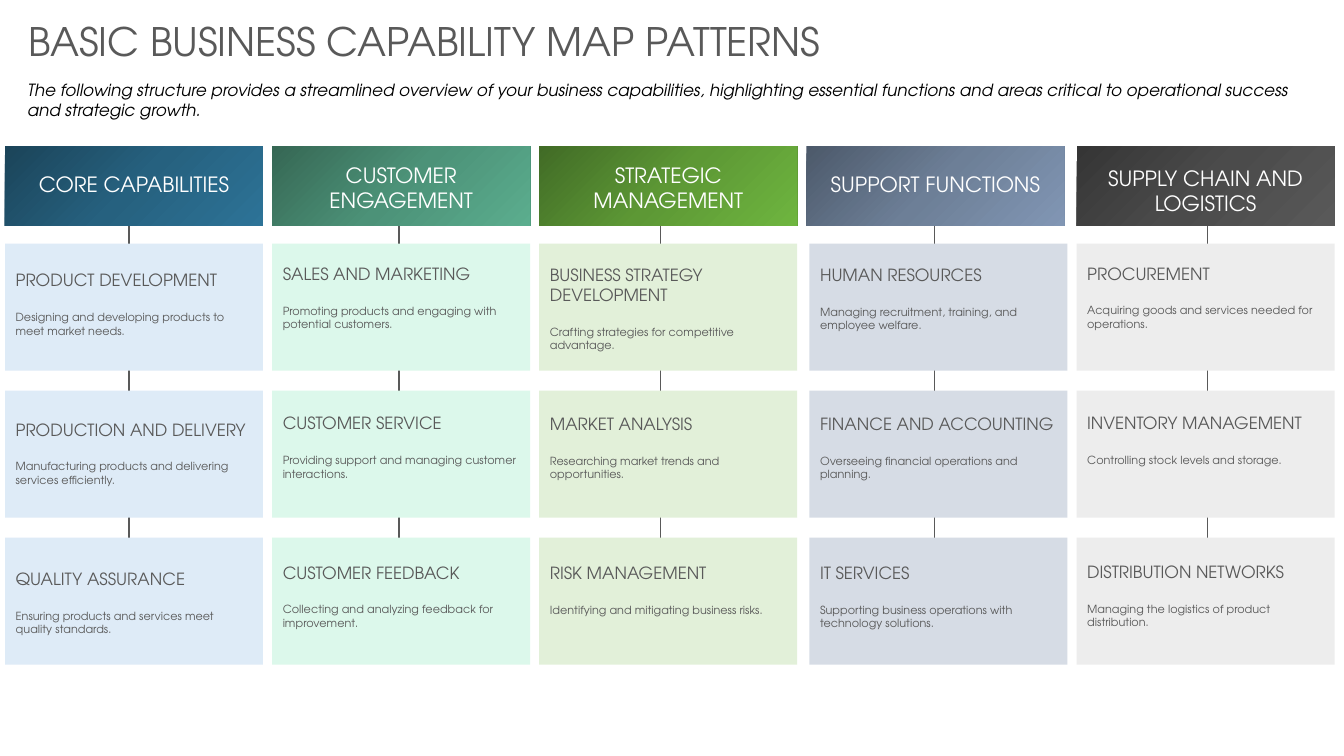
from copy import deepcopy

from pptx import Presentation
from pptx import util as u
from pptx.dml.color import RGBColor
from pptx.enum import shapes, text
from pptx.oxml import ns, xmlchemy

FONT = "TeX Gyre Adventor"
COLORS = {"ink": "595959", "black": "000000", "white": "FFFFFF"}
FORMATS = {
    "title": {"size": u.Pt(28), "color": "ink"},
    "intro": {"size": u.Pt(12), "color": "black", "italic": True},
    "header": {"size": u.Pt(15), "color": "white"},
    "capability": {"size": u.Pt(12), "color": "ink"},
    "detail": {"size": u.Pt(8), "color": "ink"},
}
HEADER_TOP, HEADER_HEIGHT = 104.4, 57
COLUMN_WIDTH = 184.3
CARD_TOP, CARD_PITCH, CARD_HEIGHT = 174, 105, 90.8
TEXT_PITCH = 106.6
DETAIL_GAP = 14.4

COLUMNS = [
    {"name": "CORE CAPABILITIES", "left": 3.6, "card_left": 3.6, "line": 92.2,
     "name_top": 118.8, "text_top": 189.4,
     "gradient": ["1B4459", "26617F", "2D7397"], "tint": "DEEBF7",
     "cards": [
         ("PRODUCT DEVELOPMENT", "Designing and developing products to meet market needs."),
         ("PRODUCTION AND DELIVERY", "Manufacturing products and delivering services efficiently."),
         ("QUALITY ASSURANCE", "Ensuring products and services meet quality standards.")]},
    {"name": "CUSTOMER ENGAGEMENT", "left": 194.4, "card_left": 194.4, "line": 285.1,
     "name_top": 112.3, "text_top": 185,
     "gradient": ["366754", "4C9278", "5BAD8E"], "tint": "DCF8EB",
     "cards": [
         ("SALES AND MARKETING", "Promoting products and engaging with potential customers."),
         ("CUSTOMER SERVICE", "Providing support and managing customer interactions."),
         ("CUSTOMER FEEDBACK", "Collecting and analyzing feedback for improvement.")]},
    {"name": "STRATEGIC MANAGEMENT", "left": 385.2, "card_left": 385.2, "line": 471.6,
     "name_top": 112.3, "text_top": 185.4,
     "gradient": ["416B26", "5D9835", "6EB53F"], "tint": "E2F0D9",
     "cards": [
         ("BUSINESS STRATEGY DEVELOPMENT", "Crafting strategies for competitive advantage."),
         ("MARKET ANALYSIS", "Researching market trends and opportunities."),
         ("RISK MANAGEMENT", "Identifying and mitigating business risks.")]},
    {"name": "SUPPORT FUNCTIONS", "left": 576, "card_left": 578.2, "line": 667.4,
     "name_top": 118.8, "text_top": 185.4,
     "gradient": ["4C596A", "6D7F97", "8196B4"], "tint": "D6DCE5",
     "cards": [
         ("HUMAN RESOURCES", "Managing recruitment, training, and employee welfare."),
         ("FINANCE AND ACCOUNTING", "Overseeing financial operations and planning."),
         ("IT SERVICES", "Supporting business operations with technology solutions.")]},
    {"name": "SUPPLY CHAIN AND LOGISTICS", "left": 769, "card_left": 769, "line": 862.6,
     "name_top": 114.5, "text_top": 184.6,
     "gradient": ["353535", "4B4B4B", "595959"], "tint": "EDEDED",
     "cards": [
         ("PROCUREMENT", "Acquiring goods and services needed for operations."),
         ("INVENTORY MANAGEMENT", "Controlling stock levels and storage."),
         ("DISTRIBUTION NETWORKS", "Managing the logistics of product distribution.")]},
]


class CapabilityMap:
    def __init__(self, page):
        self.page = page

    def line(self, x, top, bottom):
        line = self.page.shapes.add_connector(
            shapes.MSO_CONNECTOR.STRAIGHT, u.Pt(x), u.Pt(top), u.Pt(x), u.Pt(bottom))
        line.line.width = u.Pt(1)
        line.line.color.rgb = RGBColor.from_string(COLORS["ink"])
        line._element.spPr.append(xmlchemy.OxmlElement("a:effectLst"))

    def block(self, left, top, height, colors):
        block = self.page.shapes.add_shape(
            shapes.MSO_SHAPE.RECTANGLE, u.Pt(left), u.Pt(top), u.Pt(COLUMN_WIDTH), u.Pt(height))
        block.shadow.inherit = False
        block.line.fill.background()
        if len(colors) == 1:
            block.fill.solid()
            block.fill.fore_color.rgb = RGBColor.from_string(colors[0])
            return
        block.fill.gradient()
        block.fill.gradient_angle = 315
        stops = block._element.spPr.find(".//" + ns.qn("a:gsLst"))
        stops.insert(1, deepcopy(stops[0]))
        for index, (stop, color) in enumerate(zip(block.fill.gradient_stops, colors)):
            stop.position = index / 2
            stop.color.rgb = RGBColor.from_string(color)

    def text(self, left, top, width, height, lines, align=text.PP_ALIGN.LEFT, gap=0):
        box = self.page.shapes.add_textbox(u.Pt(left), u.Pt(top), u.Pt(width), u.Pt(height))
        frame = box.text_frame
        frame.word_wrap = True
        frame.auto_size = text.MSO_AUTO_SIZE.SHAPE_TO_FIT_TEXT
        for index, (words, style) in enumerate(lines):
            para = frame.add_paragraph() if index else frame.paragraphs[0]
            para.alignment = align
            para.space_before = u.Pt(gap if index else 0)
            span = para.add_run()
            span.text = words
            span.font.name = FONT
            for key, value in FORMATS[style].items():
                if key == "color":
                    span.font.color.rgb = RGBColor.from_string(COLORS[value])
                else:
                    setattr(span.font, key, value)

    def column(self, column):
        self.block(column["left"], HEADER_TOP, HEADER_HEIGHT, column["gradient"])
        self.text(column["left"] + 2, column["name_top"], 180.3, 44,
                  [(column["name"], "header")], text.PP_ALIGN.CENTER)
        for row, (capability, detail) in enumerate(column["cards"]):
            self.block(column["card_left"], CARD_TOP + row * CARD_PITCH,
                       CARD_HEIGHT, [column["tint"]])
            self.text(column["card_left"] + 0.5, column["text_top"] + row * TEXT_PITCH, 182.2, 55.4,
                      [(capability, "capability"), (detail, "detail")], gap=DETAIL_GAP)


def main():
    deck = Presentation()
    deck.slide_width, deck.slide_height = u.Pt(960), u.Pt(540)
    page = deck.slides.add_slide(deck.slide_layouts[6])
    chart = CapabilityMap(page)
    for column in COLUMNS:
        chart.line(column["line"], 120, 456)
    chart.text(13, 8.6, 932.4, 41, [("BASIC BUSINESS CAPABILITY MAP PATTERNS", "title")])
    chart.text(12.5, 53.3, 930.2, 36, [(
        "The following structure provides a streamlined overview of your business capabilities, "
        "highlighting essential functions and areas critical to operational success "
        "and strategic growth.", "intro")])
    for column in COLUMNS:
        chart.column(column)
    deck.save("out.pptx")


if __name__ == "__main__":
    main()
